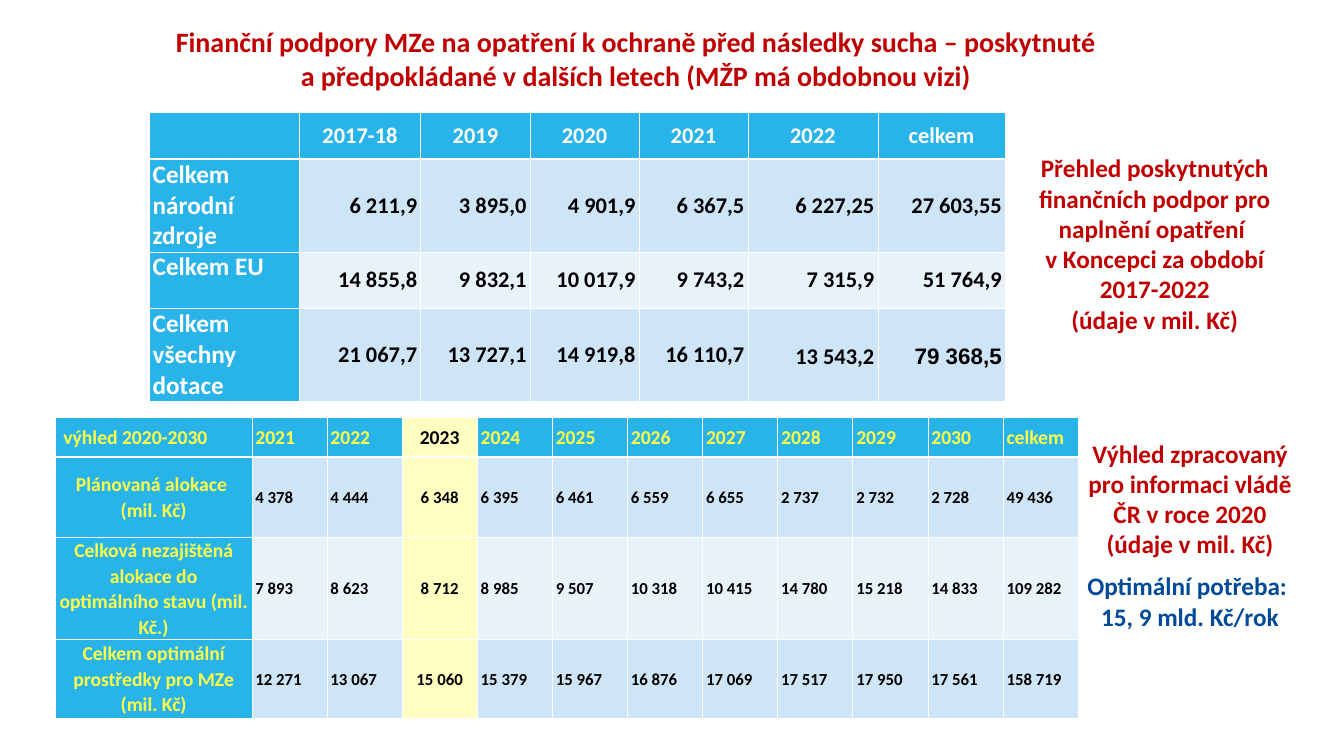
from lxml.etree import SubElement
from pptx import Presentation
from pptx.dml.color import RGBColor as RGB
from pptx.enum.text import MSO_ANCHOR as ANCHOR, MSO_AUTO_SIZE as AUTO, PP_ALIGN as ALIGN
from pptx.oxml.ns import qn
from pptx.util import Inches, Pt

COLORS = {
    "head": "29B4E9", "band": "CDE5F7", "light": "E8F2FB", "mark": "FFFFC2",
    "white": "FFFFFF", "black": "000000", "yellow": "FEFF49",
    "red": "C00000", "blue": "004A99",
}


class Deck:
    """Holds the style and the current slide; lengths are percents of the slide."""

    def __init__(self, width, height):
        self.prs = Presentation()
        self.prs.slide_width, self.prs.slide_height = Inches(width), Inches(height)
        self.slide = self.prs.slides.add_slide(self.prs.slide_layouts[6])

    def x(self, share):
        return int(self.prs.slide_width * share / 100)

    def y(self, share):
        return int(self.prs.slide_height * share / 100)

    def paragraph(self, p, text, size, color, font="Calibri", **spacing):
        p.text = text
        for name, value in spacing.items():
            setattr(p, name, value)
        style = {"name": font, "size": Pt(size), "bold": True}
        for r in p.runs:
            for name, value in style.items():
                setattr(r.font, name, value)
            r.font.color.rgb = RGB.from_string(COLORS[color])

    def text(self, left, top, width, height, paragraphs):
        sp = self.slide.shapes.add_textbox(
            self.x(left), self.y(top), self.x(width), self.y(height))
        tf = sp.text_frame
        tf.word_wrap, tf.auto_size = True, AUTO.SHAPE_TO_FIT_TEXT
        for i, (text, fmt) in enumerate(paragraphs):
            p = tf.add_paragraph() if i else tf.paragraphs[0]
            self.paragraph(p, text, alignment=ALIGN.CENTER, **fmt)

    def border(self, cell, row):
        tc_pr = cell._tc.get_or_add_tcPr()
        thick = {(0, "B"), (1, "T")}  # the rule under the header
        for side in "LRTB":
            width = Pt(3 if (row, side) in thick else 1)
            ln = SubElement(tc_pr, qn(f"a:ln{side}"), w=str(width))
            fill = SubElement(ln, qn("a:solidFill"))
            SubElement(fill, qn("a:srgbClr"), val=COLORS["white"])

    def table(self, left, top, cols, rows, data, cell_style):
        """cell_style(row, col) gives fill, anchor and text format."""
        tbl = self.slide.shapes.add_table(
            len(rows), len(cols), self.x(left), self.y(top),
            self.x(sum(cols)), self.y(sum(rows))).table
        for column, share in zip(tbl.columns, cols):
            column.width = self.x(share)
        for row, share in zip(tbl.rows, rows):
            row.height = self.y(share)
        for i, line in enumerate(data):
            for j, text in enumerate(line):
                cell = tbl.cell(i, j)
                fill, anchor, fmt = cell_style(i, j)
                self.border(cell, i)
                cell.fill.solid()
                cell.fill.fore_color.rgb = RGB.from_string(COLORS[fill])
                cell.margin_left = cell.margin_right = Inches(0.07)
                cell.margin_top = cell.margin_bottom = 0
                cell.vertical_anchor = anchor
                self.paragraph(cell.text_frame.paragraphs[0], text, **fmt)


def band(row):
    return "band" if row % 2 else "light"


def support_style(row, col):
    if row == 0:
        return "head", ANCHOR.MIDDLE, dict(size=32, color="white", alignment=ALIGN.CENTER)
    if col == 0:
        return "head", ANCHOR.TOP, dict(size=36, color="white")
    fmt = dict(size=32, color="black", alignment=ALIGN.RIGHT)
    if row == 3 and col >= 5:
        fmt.update(line_spacing=1.15, space_after=Pt(6))
    if (row, col) == (3, 6):
        fmt["font"] = "Arial"
    return band(row), ANCHOR.MIDDLE, fmt


def outlook_style(row, col):
    marked = col == 3  # the year 2023
    label = row == 0 or col == 0
    fill = "mark" if marked else "head" if label else band(row)
    fmt = dict(size=28 if label else 24,
               color="yellow" if label and not marked else "black",
               line_spacing=1.07, space_after=Pt(8))
    if marked or (col == 0 and row):
        fmt["alignment"] = ALIGN.CENTER
    return fill, ANCHOR.MIDDLE, fmt


SUPPORT = [
    ["", "2017-18", "2019", "2020", "2021", "2022", "celkem"],
    ["Celkem národní zdroje", "6 211,9", "3 895,0", "4 901,9", "6 367,5", "6 227,25", "27 603,55"],
    ["Celkem EU", "14 855,8", "9 832,1", "10 017,9", "9 743,2", "7 315,9", "51 764,9"],
    ["Celkem všechny dotace", "21 067,7", "13 727,1", "14 919,8", "16 110,7", "13 543,2", "79 368,5"],
]
OUTLOOK = [
    [" výhled 2020-2030", *map(str, range(2021, 2031)), "celkem"],
    ["Plánovaná alokace \n(mil. Kč)", "4 378", "4 444", "6 348", "6 395", "6 461",
     "6 559", "6 655", "2 737", "2 732", "2 728", "49 436"],
    ["Celková nezajištěná alokace do optimálního stavu (mil. Kč.)", "7 893", "8 623",
     "8 712", "8 985", "9 507", "10 318", "10 415", "14 780", "15 218", "14 833", "109 282"],
    ["Celkem optimální prostředky pro MZe\n(mil. Kč)", "12 271", "13 067", "15 060",
     "15 379", "15 967", "16 876", "17 069", "17 517", "17 950", "17 561", "158 719"],
]


def main():
    deck = Deck(26.67, 15)
    note = dict(size=36, color="red")

    # Tables: support granted, then the outlook
    deck.table(11.1, 14.87, [11.17, 9.04, 8.14, 8.1, 8.1, 9.67, 9.49],
               [6.2, 12, 7.53, 12], SUPPORT, support_style)
    deck.table(4.12, 55.2, [14.62] + [5.59] * 11,
               [5.2, 10.67, 13.13, 10.33], OUTLOOK, outlook_style)

    # Notes beside the tables
    deck.text(80.24, 57.6, 16.61, 34.53, [
        ("Výhled zpracovaný pro informaci vládě ČR v roce 2020", note),
        ("(údaje v mil. Kč)", note),
        ("Optimální potřeba: \n15, 9 mld. Kč/rok",
         dict(size=36, color="blue", space_before=Pt(17))),
    ])
    deck.text(75.74, 19.87, 20.36, 24.93, [
        ("Přehled poskytnutých finančních podpor pro naplnění opatření \n"
         "v Koncepci za období 2017-2022\n(údaje v mil. Kč)", note),
    ])

    # Title
    deck.text(12.22, 2.93, 70.15, 9.67, [
        ("Finanční podpory MZe na opatření k ochraně před následky sucha – poskytnuté "
         "a předpokládané v dalších letech (MŽP má obdobnou vizi)",
         dict(size=40, color="red")),
    ])
    deck.prs.save("out.pptx")


if __name__ == "__main__":
    main()
